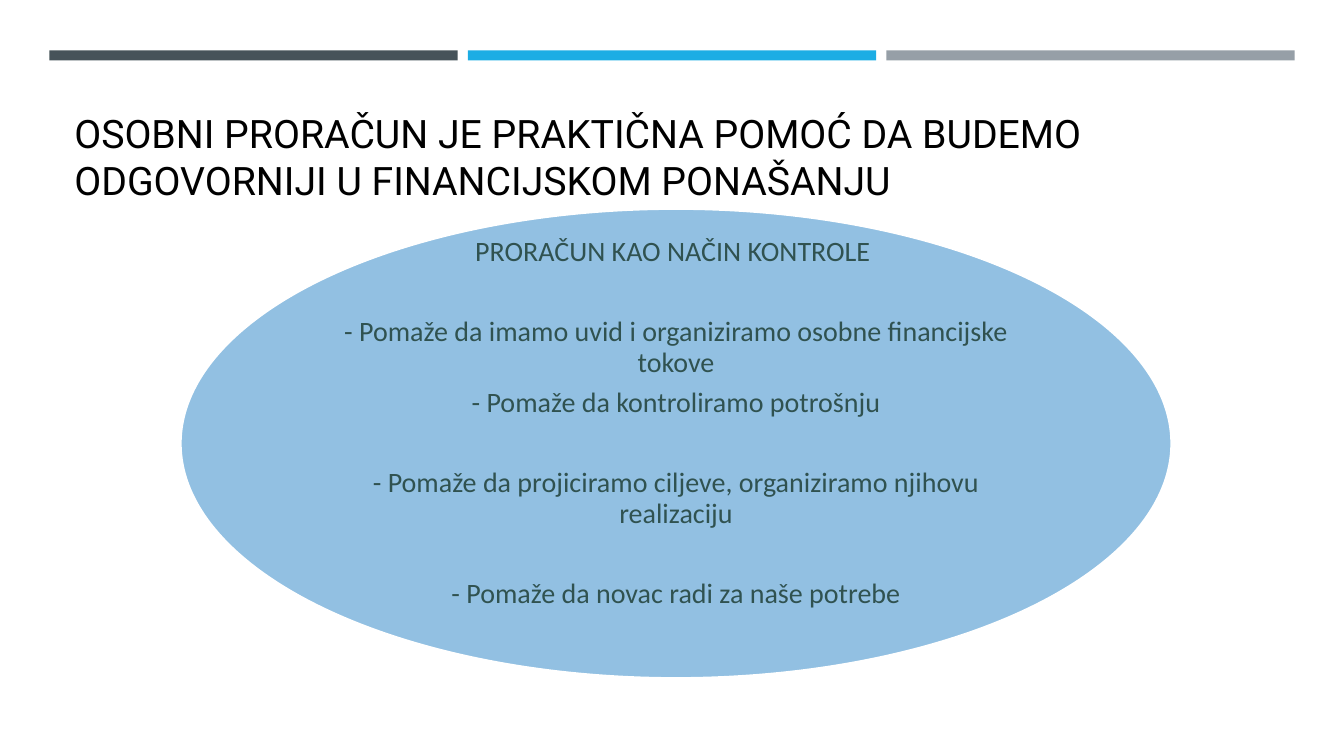
"""Build a slide about the personal budget as a means of financial control."""
from pptx import Presentation
from pptx import util as u
from pptx.dml.color import RGBColor
from pptx.enum import shapes, text
from pptx.oxml.ns import qn
from lxml import etree

SLATE = RGBColor(0x46, 0x53, 0x59)
CYAN = RGBColor(0x1C, 0xAD, 0xE4)
GREY = RGBColor(0x96, 0x9F, 0xA7)
BLUE = RGBColor(0x26, 0x83, 0xC6)
WHITE = RGBColor(0xFF, 0xFF, 0xFF)
BLACK = RGBColor(0x00, 0x00, 0x00)
GREEN = RGBColor(0x30, 0x52, 0x50)

LINE_GAP = 7
WIDE_GAP = 36

deck = Presentation()
deck.slide_width = u.Inches(13.33)
deck.slide_height = u.Inches(7.5)
page = deck.slides.add_slide(deck.slide_layouts[6])


def write(para, wording, font, size, color, align=text.PP_ALIGN.LEFT, spacing=1.0, after=0):
    para.alignment = align
    para.line_spacing = spacing
    para.space_after = u.Pt(after)
    span = para.add_run()
    span.text = wording
    span.font.name = font
    span.font.size = u.Pt(size)
    span.font.color.rgb = color


margin, bar_top, bar_width, bar_height, gutter = 0.49, 0.5, 4.05, 0.1, 0.1
for column, color in enumerate((SLATE, CYAN, GREY)):
    left = margin + column * (bar_width + gutter)
    bar = page.shapes.add_shape(
        shapes.MSO_SHAPE.RECTANGLE,
        u.Inches(left), u.Inches(bar_top), u.Inches(bar_width), u.Inches(bar_height))
    bar.shadow.inherit = False
    bar.fill.solid()
    bar.fill.fore_color.rgb = color
    bar.line.fill.background()

title = page.shapes.add_textbox(u.Inches(0.64), u.Inches(0.77), u.Inches(12.06), u.Inches(1.3))
title.text_frame.word_wrap = True
title.text_frame.vertical_anchor = text.MSO_ANCHOR.BOTTOM
write(title.text_frame.paragraphs[0],
      "OSOBNI PRORAČUN JE PRAKTIČNA POMOĆ DA BUDEMO ODGOVORNIJI U FINANCIJSKOM PONAŠANJU",
      font="Roboto", size=28, color=BLACK)

oval = page.shapes.add_shape(
    shapes.MSO_SHAPE.OVAL, u.Inches(1.79), u.Inches(2.07), u.Inches(9.83), u.Inches(4.66))
oval.shadow.inherit = False
oval.fill.solid()
oval.fill.fore_color.rgb = BLUE
oval_color = oval.fill._xPr.find(qn("a:solidFill")).find(qn("a:srgbClr"))
etree.SubElement(oval_color, qn("a:alpha"), val="50000")
oval.line.color.rgb = WHITE
oval.line.width = u.Pt(1.75)

benefits = page.shapes.add_textbox(u.Inches(3.23), u.Inches(2.75), u.Inches(6.95), u.Inches(3.3))
frame = benefits.text_frame
frame.word_wrap = True
frame.vertical_anchor = text.MSO_ANCHOR.MIDDLE
frame.margin_left = frame.margin_right = frame.margin_top = 0
frame.margin_bottom = u.Inches(0.4)
lines = (
    ("PRORAČUN KAO NAČIN KONTROLE ", WIDE_GAP),
    ("- Pomaže da imamo uvid i organiziramo osobne financijske tokove", LINE_GAP),
    ("- Pomaže da kontroliramo potrošnju", WIDE_GAP),
    ("- Pomaže da projiciramo ciljeve, organiziramo njihovu realizaciju", WIDE_GAP),
    ("- Pomaže da novac radi za naše potrebe", LINE_GAP),
)
for row, (wording, after) in enumerate(lines):
    para = frame.add_paragraph() if row else frame.paragraphs[0]
    write(para, wording, font="Calibri", size=20, color=GREEN,
          align=text.PP_ALIGN.CENTER, spacing=0.9, after=after)

deck.save("out.pptx")
